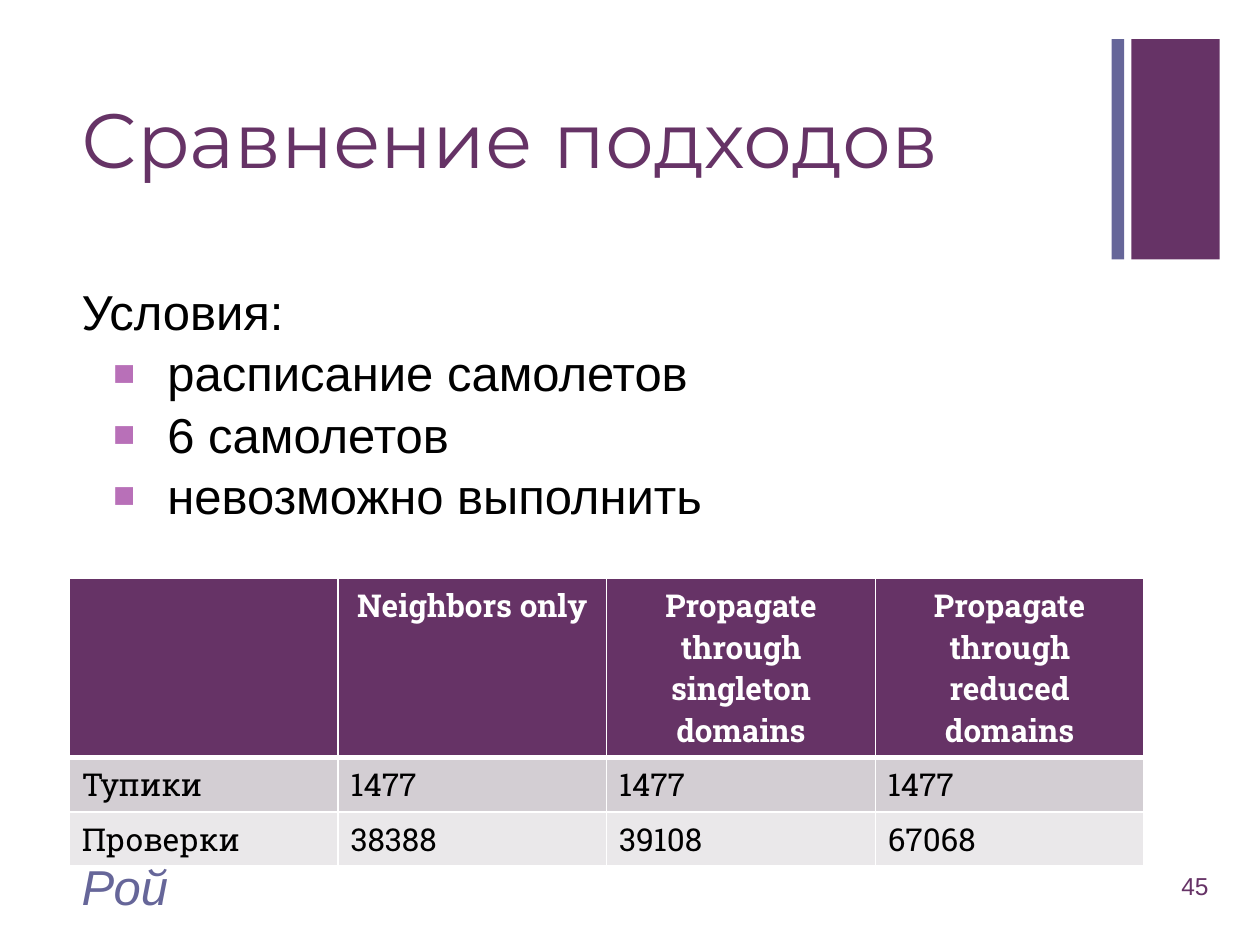
from dataclasses import dataclass

from lxml.etree import SubElement
from pptx import Presentation
from pptx.dml.color import RGBColor
from pptx.enum.shapes import MSO_SHAPE
from pptx.enum.text import MSO_ANCHOR, MSO_AUTO_SIZE, PP_ALIGN
from pptx.oxml.ns import qn
from pptx.util import Pt


@dataclass(frozen=True)
class Theme:
    """Colours, fonts and type sizes of the slide."""

    plum: str = "663366"
    slate: str = "666699"
    orchid: str = "B870B8"
    black: str = "000000"
    white: str = "FFFFFF"
    row_bands: tuple = ("D3CED3", "EAE8EA")
    title_font: str = "Montserrat"
    body_font: str = "Arial"
    table_font: str = "Roboto Slab"
    title_size: int = 44
    body_size: int = 28
    table_size: int = 18
    number_size: int = 14


THEME = Theme()
LEFT = 39.6
CONDITIONS = ["расписание самолетов", "6 самолетов", "невозможно выполнить"]
COMPARISON = [
    ["", "Neighbors only", "Propagate through singleton domains",
     "Propagate through reduced domains"],
    ["Тупики", "1477", "1477", "1477"],
    ["Проверки", "38388", "39108", "67068"],
]


def points(*lengths):
    """Convert numbers to point lengths."""
    return [Pt(length) for length in lengths]


def add_run(paragraph, text, font, size, color, bold=False, italic=False):
    """Append a formatted run."""
    run = paragraph.add_run()
    run.text = text
    run.font.name = font
    run.font.size = Pt(size)
    run.font.bold = bold
    run.font.italic = italic
    run.font.color.rgb = RGBColor.from_string(color)


def add_bar(slide, left, width, color):
    """Add one vertical bar of the corner ornament."""
    bar = slide.shapes.add_shape(MSO_SHAPE.RECTANGLE, *points(left, 22.3, width, 126))
    bar.shadow.inherit = False
    bar.fill.solid()
    bar.fill.fore_color.rgb = RGBColor.from_string(color)
    bar.line.fill.background()


def fill_title(slide, text):
    """Place and format the title placeholder."""
    title = slide.shapes.title
    title.left, title.top, title.width, title.height = points(LEFT, 38.2, 594.7, 87.8)
    frame = title.text_frame
    frame.auto_size = MSO_AUTO_SIZE.NONE
    frame.vertical_anchor = MSO_ANCHOR.MIDDLE
    heading = frame.paragraphs[0]
    heading.alignment = PP_ALIGN.LEFT
    heading.line_spacing = 0.9
    add_run(heading, text, THEME.title_font, THEME.title_size, THEME.plum)


def add_text_frame(slide, box, anchor):
    """Add a wrapping text box and return its frame."""
    frame = slide.shapes.add_textbox(*points(*box)).text_frame
    frame.word_wrap = True
    frame.vertical_anchor = anchor
    return frame


def add_label(slide, box, text, size, color, align, italic=False):
    """Add a one-line footer label."""
    label = add_text_frame(slide, box, MSO_ANCHOR.MIDDLE).paragraphs[0]
    label.alignment = align
    add_run(label, text, THEME.body_font, size, color, italic=italic)


def set_bullet(paragraph):
    """Give a paragraph a square bullet with a hanging indent."""
    paragraph.level = 1
    properties = paragraph._p.get_or_add_pPr()
    properties.set("marL", str(Pt(49)))
    properties.set("indent", str(Pt(-31)))
    color = SubElement(properties, qn("a:buClr"))
    SubElement(color, qn("a:srgbClr"), val=THEME.orchid)
    SubElement(properties, qn("a:buSzPct"), val="75000")
    SubElement(properties, qn("a:buFont"), typeface=THEME.body_font)
    SubElement(properties, qn("a:buChar"), char="■")


def add_conditions(slide, heading, conditions):
    """Add the heading and the bulleted conditions."""
    frame = add_text_frame(slide, (LEFT, 156.2, 594.7, 326.2), MSO_ANCHOR.TOP)
    for index, text in enumerate([heading, *conditions]):
        paragraph = frame.add_paragraph() if index else frame.paragraphs[0]
        paragraph.line_spacing = 1.04
        if index:
            set_bullet(paragraph)
        add_run(paragraph, text, THEME.body_font, THEME.body_size, THEME.black)


def set_borders(cell, bottom):
    """Draw white borders around a cell."""
    properties = cell._tc.get_or_add_tcPr()
    for side, width in (("L", 1), ("R", 1), ("T", 1), ("B", bottom)):
        border = SubElement(properties, qn(f"a:ln{side}"), w=str(Pt(width)))
        fill = SubElement(border, qn("a:solidFill"))
        SubElement(fill, qn("a:srgbClr"), val=THEME.white)


def add_comparison(slide, rows):
    """Add the comparison table with a dark header row."""
    column_count = len(rows[0])
    table = slide.shapes.add_table(
        len(rows), column_count, *points(LEFT, 330.5, 614.2, 88.5)).table
    for column in table.columns:
        column.width = Pt(614.2 / column_count)
    for row_index, values in enumerate(rows):
        header = row_index == 0
        table.rows[row_index].height = Pt(29.5)
        color = THEME.plum if header else THEME.row_bands[row_index - 1]
        for column_index, value in enumerate(values):
            cell = table.cell(row_index, column_index)
            set_borders(cell, 3 if header else 1)
            cell.fill.solid()
            cell.fill.fore_color.rgb = RGBColor.from_string(color)
            if value:
                paragraph = cell.text_frame.paragraphs[0]
                paragraph.alignment = PP_ALIGN.CENTER if header else PP_ALIGN.LEFT
                add_run(paragraph, value, THEME.table_font, THEME.table_size,
                        THEME.white if header else THEME.black, bold=header)


def main():
    """Build and save the slide."""
    presentation = Presentation()
    presentation.slide_width, presentation.slide_height = points(720, 540)
    slide = presentation.slides.add_slide(presentation.slide_layouts[5])
    add_bar(slide, 646.5, 50.5, THEME.plum)
    add_bar(slide, 635.2, 7.2, THEME.slate)
    fill_title(slide, "Сравнение подходов")
    add_comparison(slide, COMPARISON)
    add_label(slide, (653.8, 491.8, 43.9, 28.8), "45",
              THEME.number_size, THEME.plum, PP_ALIGN.RIGHT)
    add_conditions(slide, "Условия:", CONDITIONS)
    add_label(slide, (LEFT, 491.8, 482.4, 28.8), "Рой",
              THEME.body_size, THEME.slate, PP_ALIGN.LEFT, italic=True)
    presentation.save("out.pptx")


if __name__ == "__main__":
    main()
